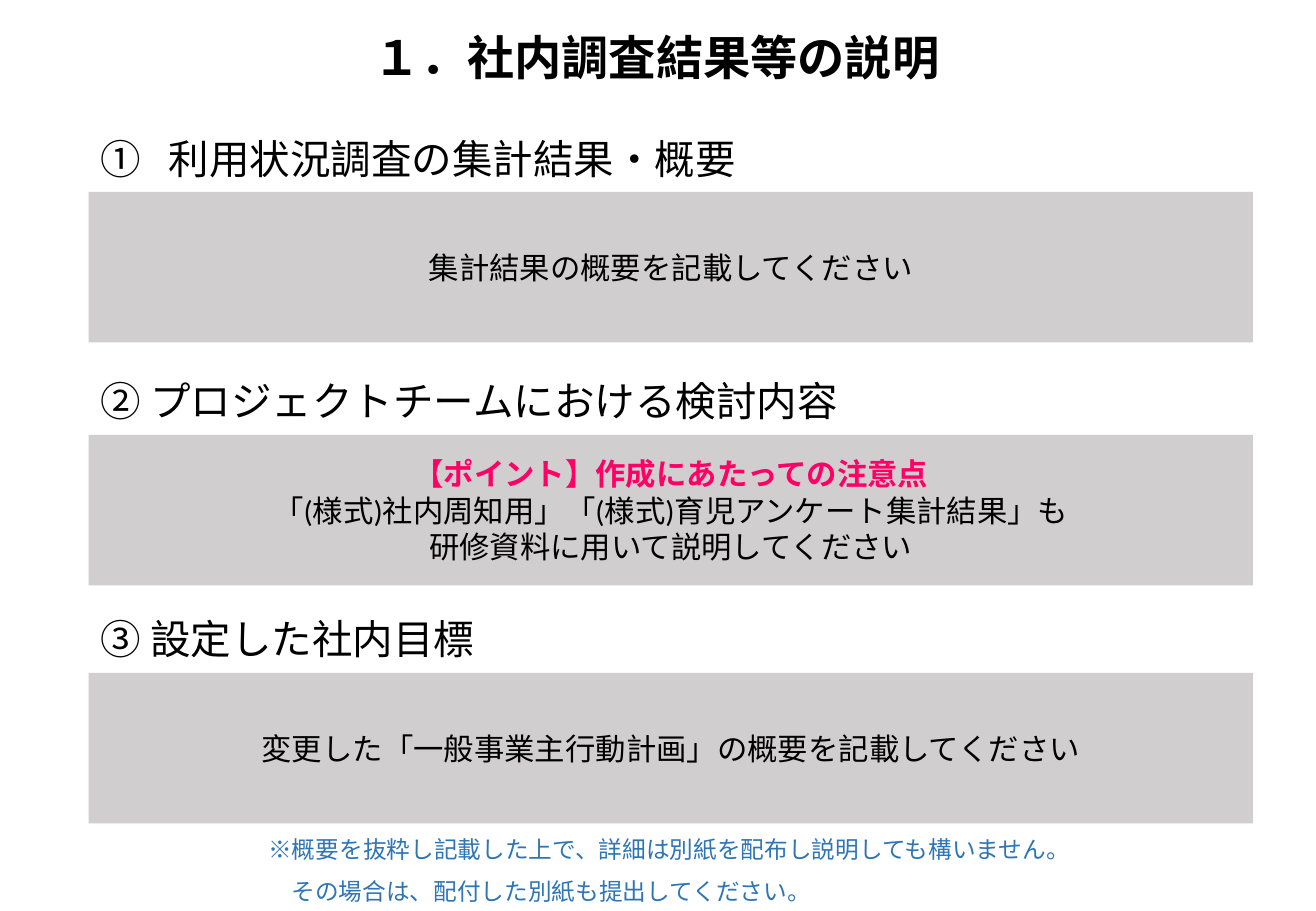
import pptx
import pptx.util
import pptx.dml.color
import pptx.enum.shapes
import pptx.enum.text
from lxml import etree

PX = 9144  # EMU per px, 100 px to the inch
COLORS = {"ink": "000000", "panel": "D0CECE", "point": "FF0066", "note": "2E75B6"}
ALIGN = pptx.enum.text.PP_ALIGN
ANCHOR = pptx.enum.text.MSO_ANCHOR
DRAWING_NS = "{http://schemas.openxmlformats.org/drawingml/2006/main}"


def px(*lengths):
    return [pptx.util.Emu(length * PX) for length in lengths]


def color(name):
    return pptx.dml.color.RGBColor.from_string(COLORS[name])


class TrainingSlide:
    def __init__(self, presentation):
        self.slide = presentation.slides.add_slide(presentation.slide_layouts[5])

    def style(self, paragraph, text, size, ink="ink", face="Arial", bold=False, align=ALIGN.LEFT):
        paragraph.text = text
        paragraph.alignment = align
        font = paragraph.font
        font.size = pptx.util.Pt(size)
        font.name = face
        font.bold = bold
        font.color.rgb = color(ink)

    def fit(self, frame, anchor=ANCHOR.TOP):
        """Keep lines unwrapped and let the box grow with its text."""
        frame.word_wrap = False
        frame.auto_size = pptx.enum.text.MSO_AUTO_SIZE.SHAPE_TO_FIT_TEXT
        frame.vertical_anchor = anchor

    def title(self, text, box):
        title = self.slide.shapes.title
        title.left, title.top, title.width, title.height = px(*box)
        self.fit(title.text_frame, ANCHOR.MIDDLE)
        paragraph = title.text_frame.paragraphs[0]
        self.style(paragraph, text, 28, bold=True)
        paragraph.line_spacing = 0.9

    def text(self, lines, box, size, ink="ink"):
        frame = self.slide.shapes.add_textbox(*px(*box)).text_frame
        self.fit(frame)
        for index, line in enumerate(lines):
            paragraph = frame.add_paragraph() if index else frame.paragraphs[0]
            self.style(paragraph, line, size, ink)
            paragraph.line_spacing = 0.9
            paragraph.space_before = pptx.util.Pt(10)
        return frame.paragraphs

    def panel(self, lines, box):
        panel = self.slide.shapes.add_shape(pptx.enum.shapes.MSO_SHAPE.RECTANGLE, *px(*box))
        panel.shadow.inherit = False
        panel.fill.solid()
        panel.fill.fore_color.rgb = color("panel")
        panel.line.fill.background()
        frame = panel.text_frame
        frame.word_wrap = True
        frame.vertical_anchor = ANCHOR.MIDDLE
        for index, (line, look) in enumerate(lines):
            paragraph = frame.add_paragraph() if index else frame.paragraphs[0]
            self.style(paragraph, line, 18, align=ALIGN.CENTER, **look)

    def indent(self, paragraph, left, first=0):
        properties = paragraph._p.get_or_add_pPr()
        properties.set("marL", str(left * PX))
        properties.set("indent", str(first * PX))
        return properties

    def circled_number(self, paragraph):
        properties = self.indent(paragraph, 56, -56)
        etree.SubElement(properties, DRAWING_NS + "buFont", typeface="+mj-lt")
        etree.SubElement(properties, DRAWING_NS + "buAutoNum", type="circleNumDbPlain")
        # Bullet elements must come before the default run properties.
        properties.append(properties.find(DRAWING_NS + "defRPr"))


CALIBRI = {"face": "Calibri"}
POINT = {"ink": "point", "bold": True}
SECTIONS = [
    ("利用状況調査の集計結果・概要", 110, 548, 158,
     [("集計結果の概要を記載してください", CALIBRI)]),
    ("② プロジェクトチームにおける検討内容", 309, 636, 358,
     [("【ポイント】作成にあたっての注意点", POINT),
      ("「(様式)社内周知用」「(様式)育児アンケート集計結果」も", CALIBRI),
      ("研修資料に用いて説明してください", CALIBRI)]),
    ("③ 設定した社内目標", 505, 333, 554,
     [("変更した「一般事業主行動計画」の概要を記載してください", {})]),
]
NOTES = ["※概要を抜粋し記載した上で、詳細は別紙を配布し説明しても構いません。",
         "その場合は、配付した別紙も提出してください。"]


def main():
    presentation = pptx.Presentation()
    presentation.slide_width, presentation.slide_height = px(1083, 750)
    page = TrainingSlide(presentation)
    page.title("１．社内調査結果等の説明", (297, 23, 491, 53))
    for number, (heading, top, width, panel_top, lines) in enumerate(SECTIONS, 1):
        heading_lines = page.text([heading], (73, top, width, 46), 24)
        if number == 1:
            page.circled_number(heading_lines[0])
        page.panel(lines, (73, panel_top, 958, 124))
    note_lines = page.text(NOTES, (211, 685, 688, 67), 14, "note")
    page.indent(note_lines[1], 19)
    presentation.save("out.pptx")


if __name__ == "__main__":
    main()
